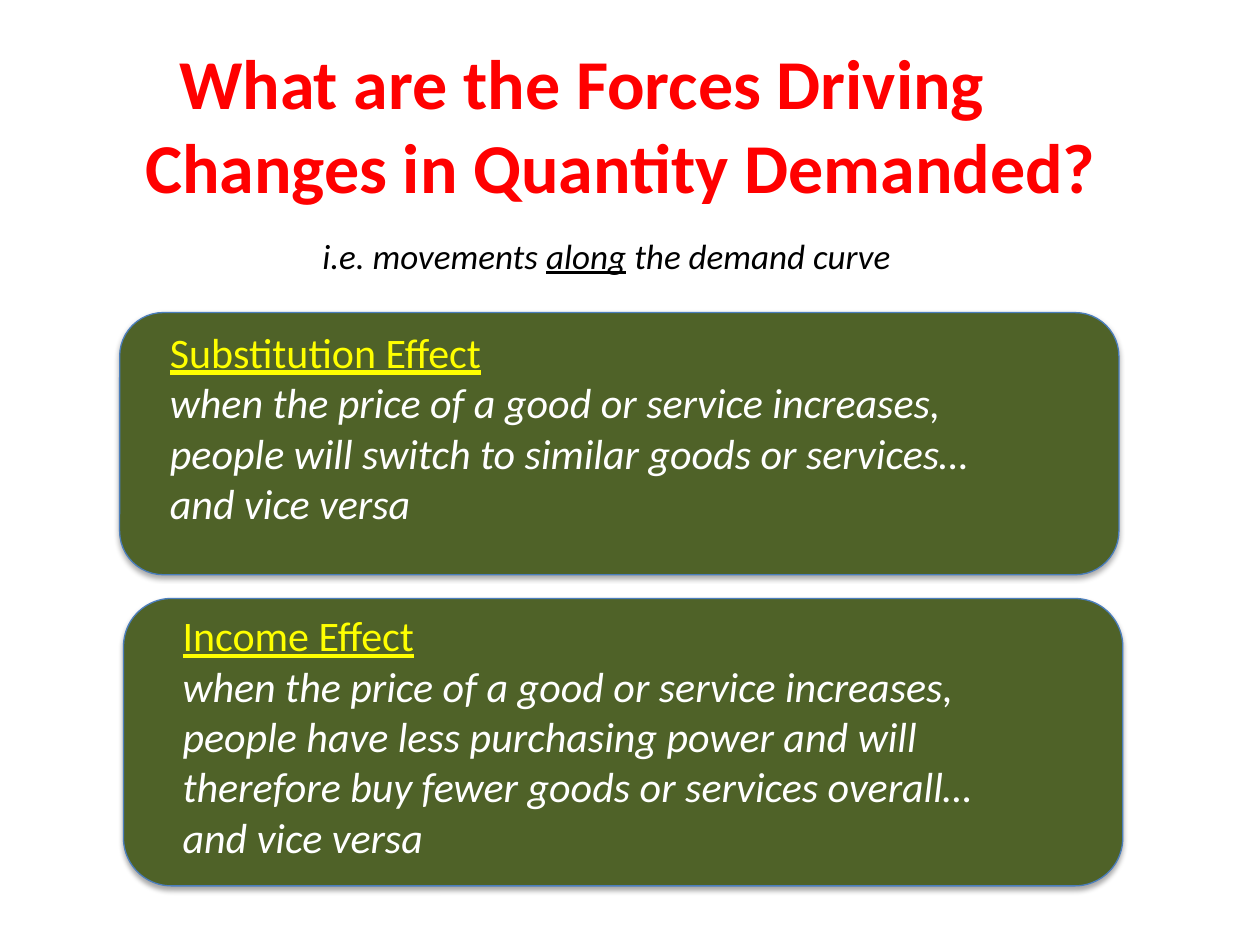
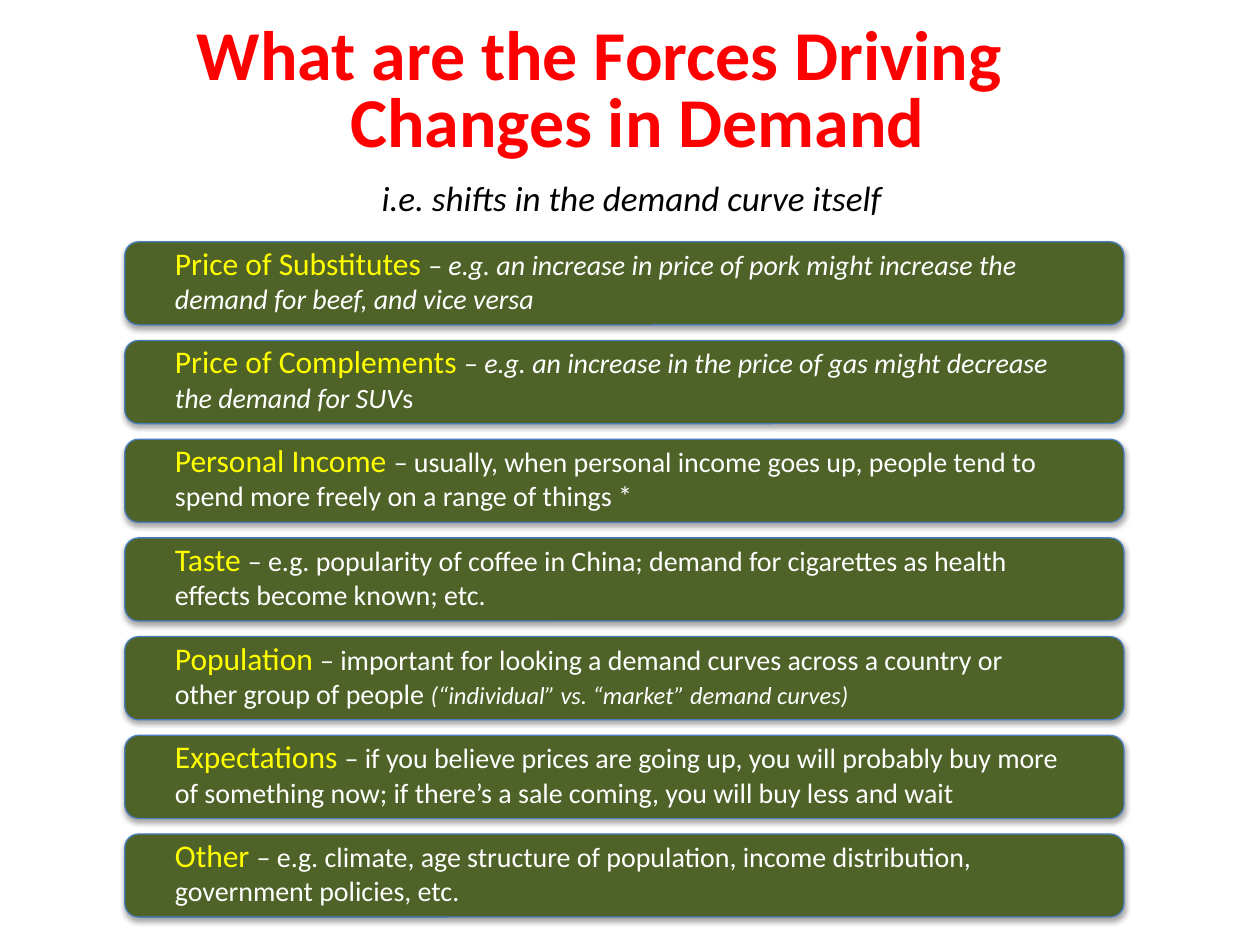
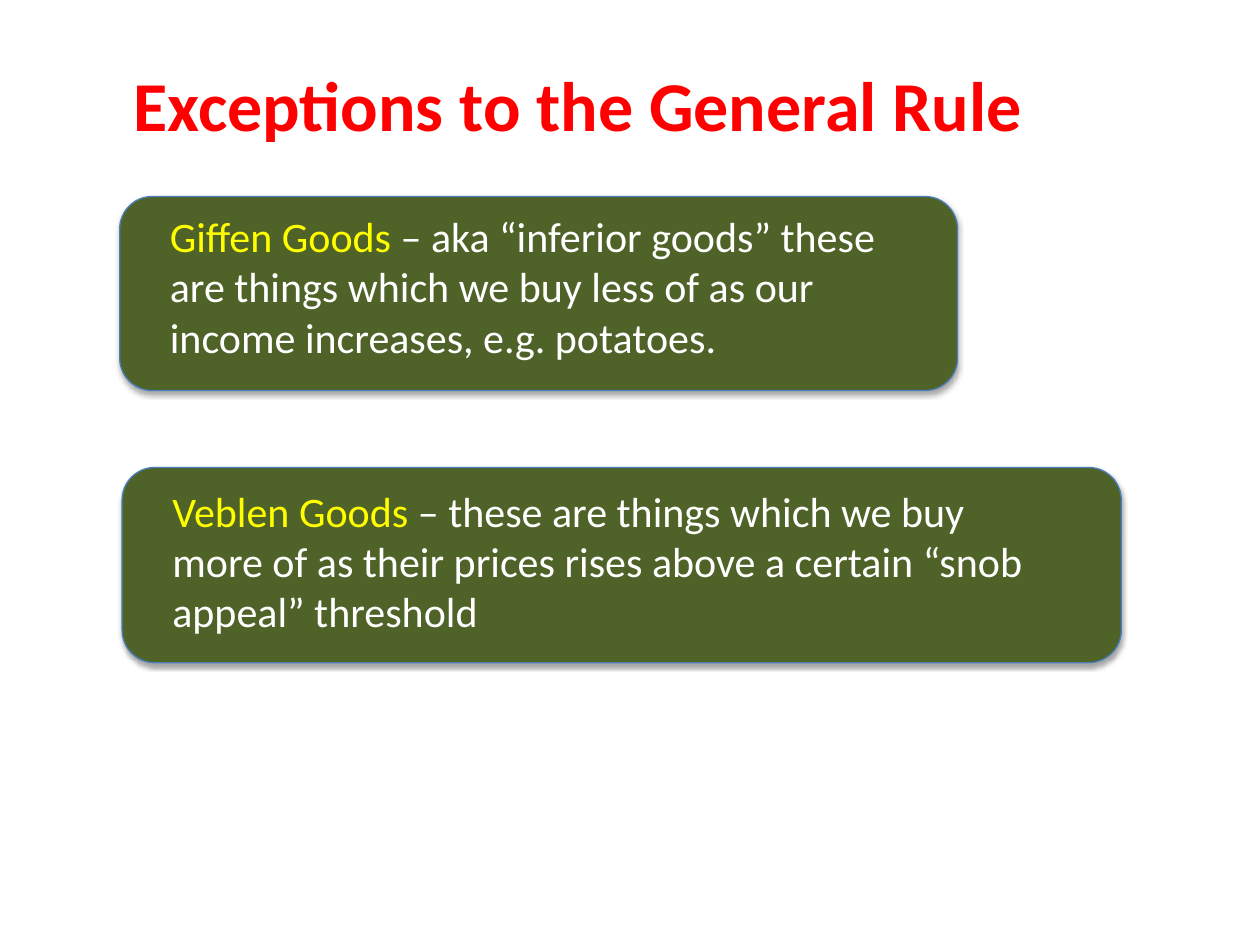
from lxml import etree
from pptx import Presentation
from pptx.dml.color import RGBColor
from pptx.enum.shapes import MSO_SHAPE
from pptx.enum.text import MSO_ANCHOR, MSO_AUTO_SIZE, PP_ALIGN
from pptx.oxml import parse_xml
from pptx.oxml.ns import nsdecls
from pptx.util import Pt

ROUNDED = MSO_SHAPE.ROUNDED_RECTANGLE
TOP = MSO_ANCHOR.TOP
LEFT = PP_ALIGN.LEFT
FIT_SHAPE = MSO_AUTO_SIZE.SHAPE_TO_FIT_TEXT

FONT = "Calibri"
RED = RGBColor(0xFF, 0x00, 0x00)
YELLOW = RGBColor(0xFF, 0xFF, 0x00)
WHITE = RGBColor(0xFF, 0xFF, 0xFF)
BLACK = RGBColor(0x00, 0x00, 0x00)
GREEN = RGBColor(0x4F, 0x62, 0x28)
BLUE = RGBColor(0x4B, 0x7E, 0xBC)

SHADOW = (
    f'<a:outerShdw {nsdecls("a")} blurRad="{Pt(3.1)}" dist="{Pt(1.8)}" dir="5400000" rotWithShape="0">'
    '<a:srgbClr val="000000"><a:alpha val="35000"/></a:srgbClr></a:outerShdw>'
)


def write_text(shape, paragraphs, wrap=True):
    """Fill a shape with paragraphs of (text, size, colour, style) runs.

    Style letters are b (bold), i (italic) and u (underline).
    """
    frame = shape.text_frame
    frame.word_wrap = wrap
    frame.auto_size = FIT_SHAPE
    frame.vertical_anchor = TOP
    for index, runs in enumerate(paragraphs):
        paragraph = frame.add_paragraph() if index else frame.paragraphs[0]
        paragraph.alignment = LEFT
        for text, size, color, style in runs:
            for line_number, line in enumerate(text.split("\n")):
                if line_number:
                    paragraph.add_line_break()
                run = paragraph.add_run()
                run.text = line
                font = run.font
                font.name = FONT
                font.size = Pt(size)
                font.color.rgb = color
                font.bold = "b" in style
                font.italic = "i" in style
                font.underline = "u" in style


def add_card(slide, card_box, text_box, paragraphs):
    card = slide.shapes.add_shape(ROUNDED, *map(Pt, card_box))
    card.fill.solid()
    card.fill.fore_color.rgb = GREEN
    card.line.color.rgb = BLUE
    card.line.width = Pt(0.75)
    card.shadow.inherit = False
    effects = card._element.spPr.find("{*}effectLst")
    effects.append(parse_xml(SHADOW))
    write_text(slide.shapes.add_textbox(*map(Pt, text_box)), paragraphs)


presentation = Presentation()
presentation.slide_width = Pt(720)
presentation.slide_height = Pt(540)
title_only = presentation.slide_layouts[5]

# Title text, box, left margin, first-line indent and line spacing
titles = [
    ("What are the Forces Driving\nChanges in Quantity Demanded?", (33.8, 18.7, 640, 104.4), 42, 19.4, 1),
    ("What are the Forces Driving\nChanges in Demand", (43.9, 11.5, 640, 86.4), 149, -87.6, 0.8),
    ("Exceptions to the General Rule", (69.1, 31.7, 640, 55.4), 0, 0, 1),
]
slides = []
for text, box, margin, indent, spacing in titles:
    slide = presentation.slides.add_slide(title_only)
    title = slide.shapes.title
    title.left, title.top, title.width, title.height = map(Pt, box)
    write_text(title, [[(text, 40, RED, "b")]])
    paragraph = title.text_frame.paragraphs[0]
    paragraph.line_spacing = spacing
    properties = paragraph._p.get_or_add_pPr()
    properties.set("marL", str(Pt(margin)))
    properties.set("indent", str(Pt(indent)))
    slides.append(slide)
quantity_slide, demand_slide, exceptions_slide = slides

subtitles = [
    (quantity_slide, (177.1, 130.3, 347, 31.7),
     [("i.e. movements ", 20, BLACK, "i"), ("along", 20, BLACK, "iu"), (" the demand curve", 20, BLACK, "i")]),
    (demand_slide, (211, 97.2, 307.4, 31.7), [("i.e. shifts in the demand curve itself", 20, BLACK, "i")]),
]
for slide, box, runs in subtitles:
    write_text(slide.shapes.add_textbox(*map(Pt, box)), [runs], wrap=False)

# Slide 1: the two effects
effects_on_quantity = [
    ((68.4, 178.6, 571, 149.8), (90, 182.9, 522, 123.8), "Substitution Effect",
     "when the price of a good or service increases, people will switch to similar goods or services…"
     "\nand vice versa"),
    ((70.6, 342, 571, 164.2), (97.2, 344.9, 522, 152.6), "Income Effect",
     "when the price of a good or service increases, people have less purchasing power and will "
     "therefore buy fewer goods or services overall…\nand vice versa"),
]
for card_box, text_box, heading, explanation in effects_on_quantity:
    add_card(quantity_slide, card_box, text_box,
             [[(heading, 24, YELLOW, "u")], [(explanation, 24, WHITE, "i")]])

# Slide 2: evenly spaced forces
forces = [
    ("Price of Substitutes ", [
        ("– ", 16, WHITE, ""),
        ("e.g. an increase in price of pork might increase the demand for beef, and vice versa", 16, WHITE, "i")]),
    ("Price of Complements ", [
        ("– ", 16, WHITE, ""),
        ("e.g. an increase in the price of gas might decrease the demand for SUV", 16, WHITE, "i"),
        ("s", 16, WHITE, "")]),
    ("Personal Income ", [
        ("– usually, when personal income goes up, people tend to spend more freely on a range of things *",
         16, WHITE, "")]),
    ("Taste ", [
        ("– e.g. popularity of coffee in China; demand for cigarettes as health effects become known; etc.",
         16, WHITE, "")]),
    ("Population ", [
        ("– important for looking a demand curves across a country or other group of people ", 16, WHITE, ""),
        ("(“individual” vs. “market” demand curves)", 14, WHITE, "i")]),
    ("Expectations ", [
        ("– if you believe prices are going up, you will probably buy more of something now; "
         "if there’s a sale coming, you will buy less and wait", 16, WHITE, "")]),
    ("Other ", [
        ("– e.g. climate, age structure of population, income distribution, government policies, etc.",
         16, WHITE, "")]),
]
FIRST_FORCE_TOP = 138.2
FORCE_STEP = 56.4
for index, (heading, explanation) in enumerate(forces):
    top = FIRST_FORCE_TOP + index * FORCE_STEP
    add_card(demand_slide, (71.3, top, 571, 47.5), (92.9, top - 2.4, 522, 48.2),
             [[(heading, 18, YELLOW, "")] + explanation])

# Slide 3: the two exceptions
exceptions = [
    ((68.4, 112.3, 478.8, 110.9), (90, 116.6, 441.4, 94.3), "Giffen Goods ",
     "– aka “inferior goods” these are things which we buy less of as our income increases, e.g. potatoes."),
    ((69.8, 267.1, 571, 111.6), (91.4, 273.6, 522, 94.3), "Veblen Goods ",
     "– these are things which we buy more of as their prices rises above a certain “snob appeal” threshold"),
]
for card_box, text_box, heading, explanation in exceptions:
    add_card(exceptions_slide, card_box, text_box,
             [[(heading, 24, YELLOW, ""), (explanation, 24, WHITE, "")]])

presentation.save("out.pptx")
